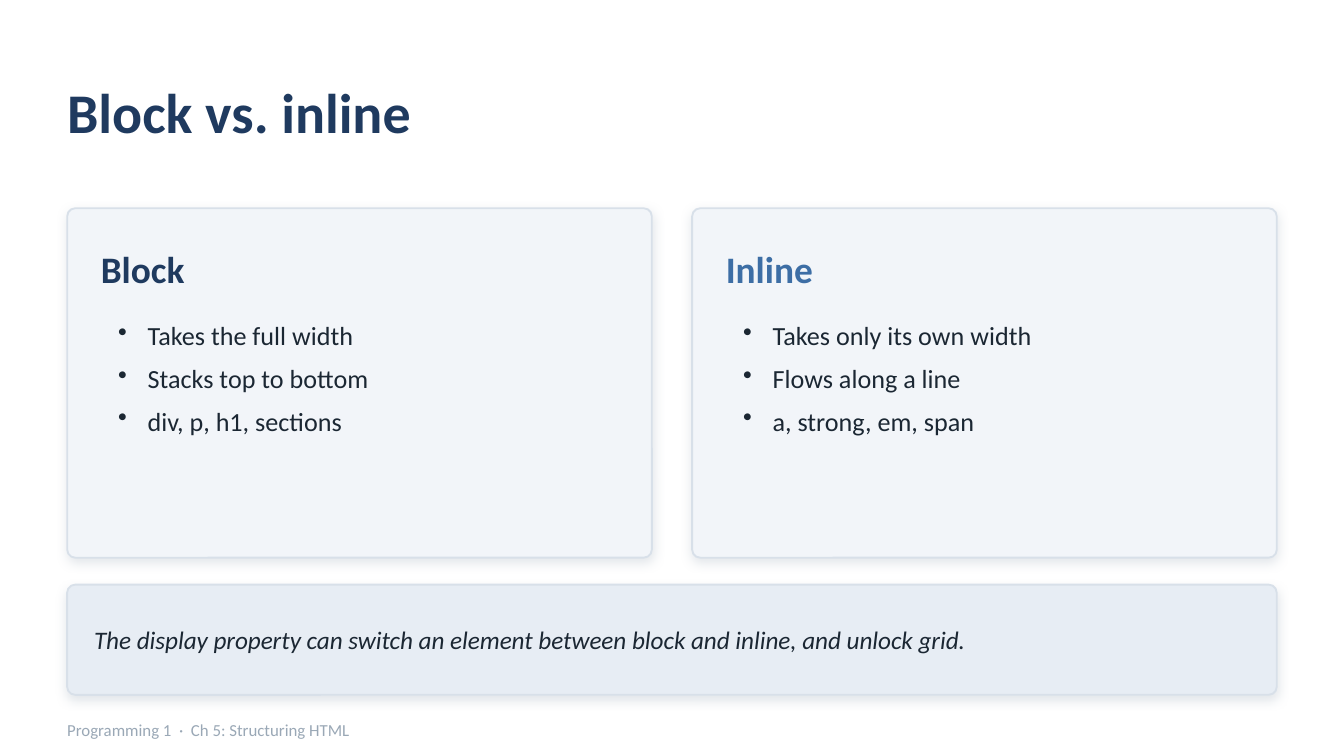
from dataclasses import dataclass

from lxml import etree
from pptx import Presentation
from pptx.dml.color import RGBColor
from pptx.enum.shapes import MSO_SHAPE
from pptx.enum.text import MSO_ANCHOR
from pptx.oxml.ns import qn
from pptx.util import Emu, Pt

PX = 9144  # 100 px to the inch
SLIDE_WIDTH = 1000
ROUNDED = MSO_SHAPE.ROUNDED_RECTANGLE
TOP, MIDDLE = MSO_ANCHOR.TOP, MSO_ANCHOR.MIDDLE


@dataclass(frozen=True)
class Theme:
    font: str = "Calibri"
    background: str = "FFFFFF"
    navy: str = "1F3A5F"
    blue: str = "3D6EA5"
    ink: str = "1B2733"
    muted: str = "9AA8B6"
    border: str = "D8E0E9"
    card: str = "F2F5F9"
    note: str = "E7EDF4"
    title_size: float = 30
    heading_size: float = 20
    body_size: float = 14
    note_size: float = 13.5
    footer_size: float = 9


THEME = Theme()


def px(*lengths):
    return [Emu(length * PX) for length in lengths]


def rgb(color):
    return RGBColor.from_string(color)


def add_bullet(paragraph, indent):
    properties = paragraph._p.get_or_add_pPr()
    properties.set("marL", str(indent * PX))
    properties.set("indent", str(-indent * PX))
    etree.SubElement(properties, qn("a:buSzPct"), val="100000")
    etree.SubElement(properties, qn("a:buChar"), char="•")


def add_text(slide, box, *lines, size, color, bold=False, italic=False,
             anchor=MIDDLE, inset=(0, 0), bullet_indent=0, space_after=0):
    """Write one paragraph per line; inset is (horizontal, vertical)."""
    frame = slide.shapes.add_textbox(*px(*box)).text_frame
    frame.word_wrap = True
    frame.vertical_anchor = anchor
    frame.margin_left, frame.margin_top = px(*inset)
    frame.margin_right, frame.margin_bottom = px(*inset)
    for index, line in enumerate(lines):
        paragraph = frame.add_paragraph() if index else frame.paragraphs[0]
        if bullet_indent:
            add_bullet(paragraph, bullet_indent)
        if space_after:
            paragraph.space_after = Pt(space_after)
        run = paragraph.add_run()
        run.text = line
        run.font.name = THEME.font
        run.font.size = Pt(size)
        run.font.bold = bold
        run.font.italic = italic
        run.font.color.rgb = rgb(color)


def add_soft_shadow(shape):
    shape.shadow.inherit = False
    effects = shape._element.spPr.find(qn("a:effectLst"))
    shadow = etree.SubElement(
        effects, qn("a:outerShdw"), blurRad=str(Pt(6)), dist=str(Pt(2)),
        dir=str(90 * 60000), algn="bl", rotWithShape="0")
    color = etree.SubElement(shadow, qn("a:srgbClr"), val=THEME.muted)
    etree.SubElement(color, qn("a:alpha"), val="28000")


def add_panel(slide, box, fill, radius=6):
    panel = slide.shapes.add_shape(ROUNDED, *px(*box))
    panel.adjustments[0] = radius / min(box[2:])
    panel.fill.solid()
    panel.fill.fore_color.rgb = rgb(fill)
    panel.line.color.rgb = rgb(THEME.border)
    panel.line.width = Pt(1)
    add_soft_shadow(panel)


def add_card(slide, box, heading, heading_color, points):
    left, top, width, height = box
    inner_width = width - 50
    add_panel(slide, box, THEME.card)
    add_text(slide, (left + 25, top + 20, inner_width, 50), heading,
             size=THEME.heading_size, color=heading_color, bold=True)
    add_text(slide, (left + 28, top + 78, inner_width, height - 100), *points,
             size=THEME.body_size, color=THEME.ink, anchor=TOP,
             inset=(10, 5), bullet_indent=22, space_after=6)


def add_comparison(slide, box, cards, gap=30):
    """Set the cards side by side in equal columns."""
    left, top, width, height = box
    card_width = (width - gap * (len(cards) - 1)) // len(cards)
    for column, card in enumerate(cards):
        card_left = left + column * (card_width + gap)
        add_card(slide, (card_left, top, card_width, height), *card)


def add_note(slide, box, sentence):
    left, top, width, height = box
    add_panel(slide, box, THEME.note)
    add_text(slide, (left + 20, top + 5, width - 40, height - 10), sentence,
             size=THEME.note_size, color=THEME.ink, italic=True)


def main():
    presentation = Presentation()
    presentation.slide_width = Emu(SLIDE_WIDTH * PX)
    presentation.slide_height = Emu(SLIDE_WIDTH * PX * 9 // 16)
    slide = presentation.slides.add_slide(presentation.slide_layouts[6])
    slide.background.fill.solid()
    slide.background.fill.fore_color.rgb = rgb(THEME.background)

    add_text(slide, (50, 40, 900, 85), "Block vs. inline",
             size=THEME.title_size, color=THEME.navy, bold=True)
    add_comparison(slide, (50, 155, 900, 260), [
        ("Block", THEME.navy,
         ["Takes the full width", "Stacks top to bottom",
          "div, p, h1, sections"]),
        ("Inline", THEME.blue,
         ["Takes only its own width", "Flows along a line",
          "a, strong, em, span"]),
    ])
    add_note(slide, (50, 435, 900, 82),
             "The display property can switch an element between block and "
             "inline, and unlock grid.")
    add_text(slide, (50, 530, 800, 26),
             "Programming 1  ·  Ch 5: Structuring HTML",
             size=THEME.footer_size, color=THEME.muted)
    presentation.save("out.pptx")


if __name__ == "__main__":
    main()
